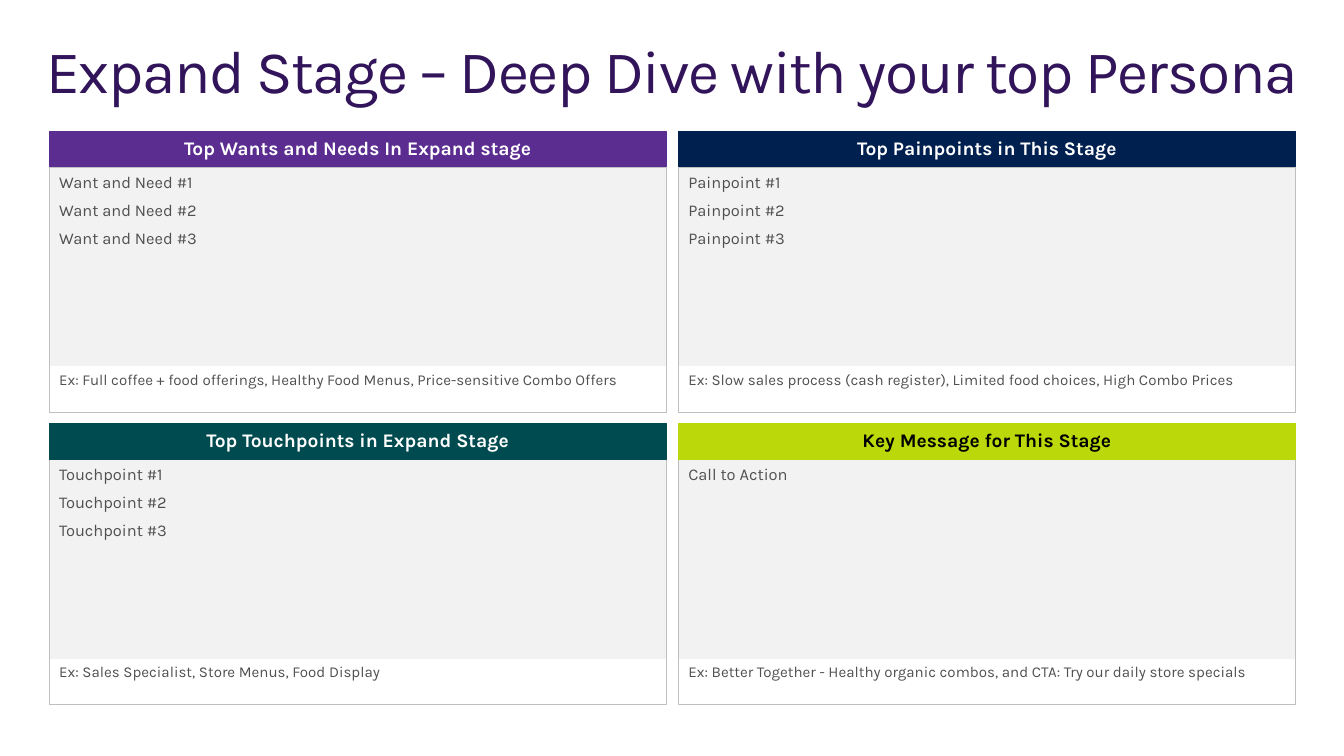
"""Build the Expand Stage slide: a title above a two by two grid of cards."""
from pptx import Presentation
from pptx.dml.color import RGBColor
from pptx.enum.shapes import MSO_SHAPE
from pptx.enum.text import MSO_ANCHOR, PP_ALIGN
from pptx.util import Cm, Pt

TITLE = "Expand Stage – Deep Dive with your top Persona"
CARDS = [
    ("Top Wants and Needs In Expand stage", "5C2D91", "FFFFFF",
     ["Want and Need #1", "Want and Need #2", "Want and Need #3"],
     "Ex: Full coffee + food offerings, Healthy Food Menus, Price-sensitive Combo Offers"),
    ("Top Painpoints in This Stage", "002050", "FFFFFF",
     ["Painpoint #1", "Painpoint #2", "Painpoint #3"],
     "Ex: Slow sales process (cash register), Limited food choices, High Combo Prices"),
    ("Top Touchpoints in Expand Stage", "004B50", "FFFFFF",
     ["Touchpoint #1", "Touchpoint #2", "Touchpoint #3"],
     "Ex: Sales Specialist, Store Menus, Food Display"),
    ("Key Message for This Stage", "BAD80A", "000000",
     ["Call to Action"],
     "Ex: Better Together - Healthy organic combos, and CTA: Try our daily store specials"),
]
FONT, GRAY, PALE, EDGE = "Karla", "505050", "F2F2F2", "BFBFBF"
LEFT, TOP, WIDE = 1.27, 3.37, 15.85
STEP_X, STEP_Y = 16.17, 7.51
HEAD, BODY, CARD = 0.92, 5.11, 6.31


def color(code):
    return RGBColor.from_string(code)


def write(shape, lines, size=12, ink=GRAY, bold=False, align=PP_ALIGN.LEFT,
          anchor=MSO_ANCHOR.TOP, inset=(0.25, 0.13), lead=1, gap=0, track=0):
    frame = shape.text_frame
    frame.word_wrap = True
    frame.vertical_anchor = anchor
    frame.margin_left = frame.margin_right = Cm(inset[0])
    frame.margin_top = Cm(inset[1])
    for i, line in enumerate(lines):
        para = frame.add_paragraph() if i else frame.paragraphs[0]
        para.alignment, para.line_spacing = align, lead
        para.space_before = Pt(gap if i else 0)
        run = para.add_run()
        run.text = line
        font = run.font
        font.name, font.size, font.bold = FONT, Pt(size), bold
        font.color.rgb = color(ink)
        if track:
            run._r.get_or_add_rPr().set("spc", str(track))


def panel(slide, x, y, high, fill, edge):
    shape = slide.shapes.add_shape(MSO_SHAPE.RECTANGLE, Cm(x), Cm(y), Cm(WIDE), Cm(high))
    shape.shadow.inherit = False
    if fill:
        shape.fill.solid()
        shape.fill.fore_color.rgb = color(fill)
    else:
        shape.fill.background()
    shape.line.color.rgb = color(edge)
    shape.line.width = Pt(0.5)
    return shape


def main():
    deck = Presentation()
    deck.slide_width, deck.slide_height = Cm(34.54), Cm(19.43)
    slide = deck.slides.add_slide(deck.slide_layouts[6])
    title = slide.shapes.add_textbox(Cm(0.78), Cm(0.81), Cm(33.7), Cm(2.54))
    write(title, [TITLE], size=44, ink="32145A", inset=(0.41, 0.25), lead=0.9, track=-105)
    for i, (name, fill, ink, items, hint) in enumerate(CARDS):
        row, col = divmod(i, 2)
        x, y = LEFT + col * STEP_X, TOP + row * STEP_Y
        write(panel(slide, x, y + HEAD, BODY, PALE, PALE), items, gap=6)
        write(panel(slide, x, y + HEAD, CARD, None, EDGE), [hint], size=11, inset=(0.25, 5.23))
        write(panel(slide, x, y, HEAD, fill, fill), [name], size=14, ink=ink, bold=True,
              align=PP_ALIGN.CENTER, anchor=MSO_ANCHOR.MIDDLE, lead=0.9)
    deck.save("out.pptx")


if __name__ == "__main__":
    main()
